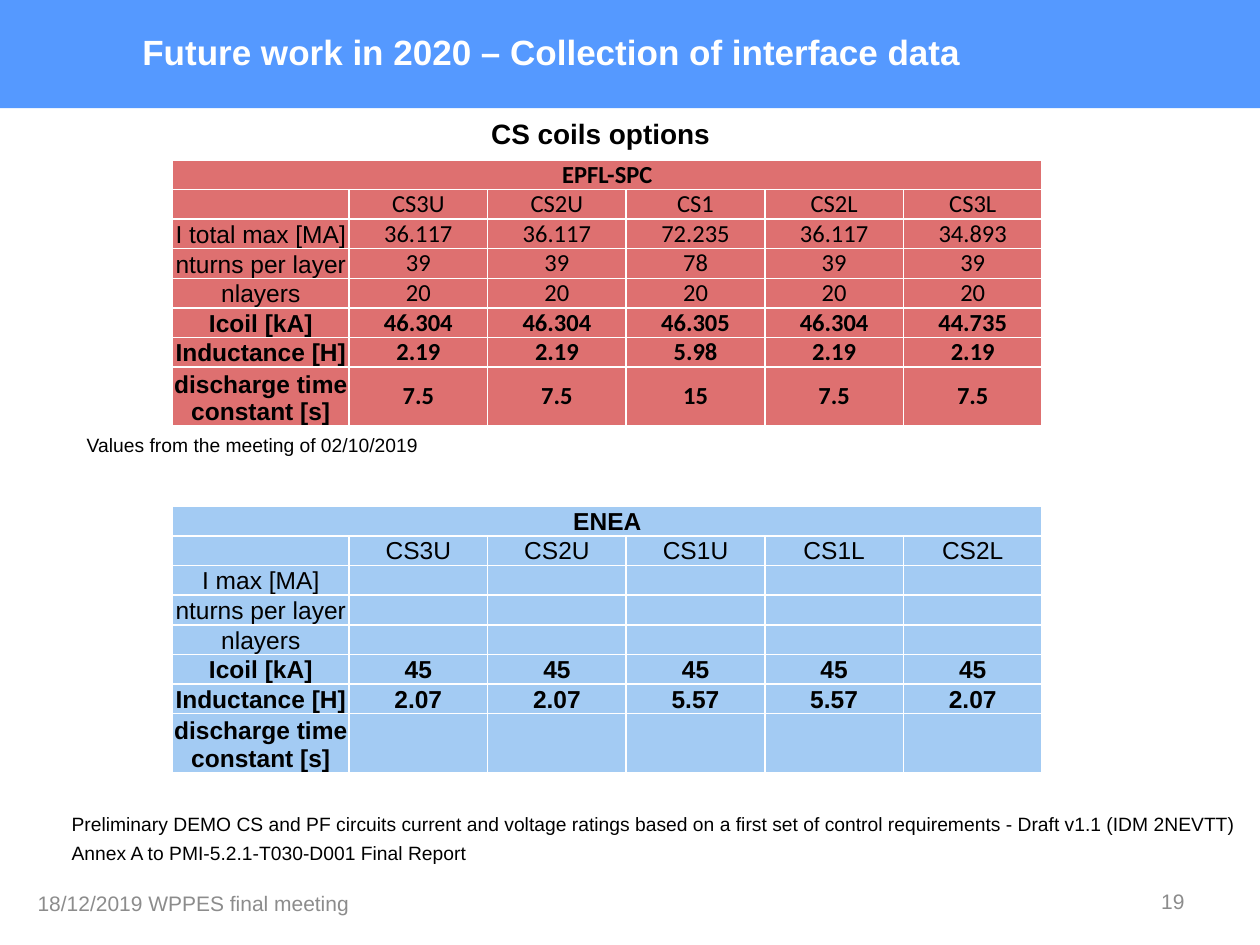
import lxml.etree
import pptx
import pptx.dml.color
import pptx.enum.shapes
import pptx.enum.text
import pptx.oxml.ns
import pptx.util

Inches = pptx.util.Inches
Align = pptx.enum.text.PP_ALIGN
Anchor = pptx.enum.text.MSO_ANCHOR
qn = pptx.oxml.ns.qn

COLORS = {
    "band": "5599FF",
    "red": "DE7070",
    "blue": "A3CBF3",
    "white": "FFFFFF",
    "black": "000000",
    "gray": "8C8C8C",
}
SIDES = ("lnL", "lnR", "lnT", "lnB")
TURNS = "nturns per layer"
DECAY = "discharge time constant [s]"
BLANK = [""] * 5

SPC = [
    ["EPFL-SPC"] + BLANK,
    ["", "CS3U", "CS2U", "CS1", "CS2L", "CS3L"],
    ["I total max [MA]", "36.117", "36.117", "72.235", "36.117", "34.893"],
    [TURNS, "39", "39", "78", "39", "39"],
    ["nlayers"] + ["20"] * 5,
    ["Icoil [kA]", "46.304", "46.304", "46.305", "46.304", "44.735"],
    ["Inductance [H]", "2.19", "2.19", "5.98", "2.19", "2.19"],
    [DECAY, "7.5", "7.5", "15", "7.5", "7.5"],
]
ENEA = [
    ["ENEA"] + BLANK,
    ["", "CS3U", "CS2U", "CS1U", "CS1L", "CS2L"],
    ["I max [MA]"] + BLANK,
    [TURNS] + BLANK,
    ["nlayers"] + BLANK,
    ["Icoil [kA]"] + ["45"] * 5,
    ["Inductance [H]", "2.07", "2.07", "5.57", "5.57", "2.07"],
    [DECAY] + BLANK,
]


def rgb(name):
    return pptx.dml.color.RGBColor.from_string(COLORS[name])


class Deck:
    def __init__(self):
        self.prs = pptx.Presentation()
        self.prs.slide_width = Inches(10)
        self.prs.slide_height = Inches(7.5)
        self.slide = self.prs.slides.add_slide(self.prs.slide_layouts[5])
        self.shapes = self.slide.shapes

    def style(self, frame, size, color="black", bold=False, align=Align.LEFT,
              face="Arial"):
        for para in frame.paragraphs:
            para.alignment = align
            for run in para.runs:
                run.font.name = face
                run.font.size = pptx.util.Pt(size)
                run.font.bold = bold
                run.font.color.rgb = rgb(color)

    def band(self, height):
        """Draw the header band behind everything else."""
        rect = self.shapes.add_shape(
            pptx.enum.shapes.MSO_SHAPE.RECTANGLE, 0, 0,
            self.prs.slide_width, Inches(height))
        rect.shadow.inherit = False
        rect.fill.solid()
        rect.fill.fore_color.rgb = rgb("band")
        rect.line.fill.background()
        self.shapes.title._element.addprevious(rect._element)

    def title(self, text, left, top, width, height):
        box = self.shapes.title
        box.left, box.top = Inches(left), Inches(top)
        box.width, box.height = Inches(width), Inches(height)
        box.text_frame.text = text
        box.text_frame.vertical_anchor = Anchor.MIDDLE
        self.style(box.text_frame, 20, "white", True)

    def text(self, text, left, top, width, height, size=11,
             anchor=Anchor.TOP, **look):
        box = self.shapes.add_textbox(
            Inches(left), Inches(top), Inches(width), Inches(height))
        frame = box.text_frame
        frame.word_wrap = True
        frame.vertical_anchor = anchor
        frame.text = text
        self.style(frame, size, **look)

    def cell(self, cell, text, fill, **look):
        cell.margin_left = cell.margin_right = 0
        cell.margin_top = cell.margin_bottom = 0
        props = cell._tc.get_or_add_tcPr()
        for side in SIDES:
            line = lxml.etree.SubElement(props, qn("a:" + side), w="12700")
            paint = lxml.etree.SubElement(line, qn("a:solidFill"))
            lxml.etree.SubElement(paint, qn("a:srgbClr"), val=COLORS["white"])
        cell.fill.solid()
        cell.fill.fore_color.rgb = rgb(fill)
        cell.text_frame.text = text
        self.style(cell.text_frame, 14, align=Align.CENTER, **look)
        if not text:  # keeps an empty cell as low as the filled ones
            para = cell.text_frame.paragraphs[0]._p
            lxml.etree.SubElement(para, qn("a:endParaRPr"), sz="1400")

    def table(self, rows, top, last, fill, face, mid):
        """Add a coil table; row numbers in mid have centred values."""
        height = 0.235 * (len(rows) - 1) + last
        grid = self.shapes.add_table(
            len(rows), len(rows[0]), Inches(1.37), Inches(top),
            Inches(6.9), Inches(height)).table
        grid.horz_banding = grid.first_row = False
        for col in grid.columns:
            col.width = Inches(1.1)
        grid.columns[0].width = Inches(1.4)
        for i, row in enumerate(rows):
            grid.rows[i].height = Inches(0.235)
            for j, text in enumerate(row):
                cell = grid.cell(i, j)
                label = j == 0 and i > 0
                self.cell(cell, text, fill, bold=i == 0 or i > 4,
                          face="Arial" if label else face)
                centred = i in mid and not label
                cell.vertical_anchor = (
                    Anchor.MIDDLE if centred else Anchor.BOTTOM)
        grid.rows[len(rows) - 1].height = Inches(last)
        grid.cell(0, 0).merge(grid.cell(0, len(rows[0]) - 1))


def main():
    deck = Deck()
    deck.band(0.86)
    deck.title("Future work in 2020 – Collection of interface data",
               1.03, 0.05, 7.91, 0.71)
    deck.text("CS coils options", 3.8, 0.88, 2.02, 0.37, 16, bold=True)
    deck.table(SPC, 1.27, 0.43, "red", "Calibri", mid=(7,))
    deck.text("Values from the meeting of 02/10/2019", 0.59, 3.39, 3, 0.29)
    deck.table(ENEA, 4.02, 0.46, "blue", "Arial", mid=(1,))
    deck.text("Preliminary DEMO CS and PF circuits current and voltage ratings "
              "based on a first set of control requirements - Draft v1.1 "
              "(IDM 2NEVTT)", 0.47, 6.4, 9.53, 0.29)
    deck.text("Annex A to PMI-5.2.1-T030-D001 Final Report",
              0.47, 6.63, 3.55, 0.29)
    deck.text("18/12/2019 WPPES final meeting", 0.2, 6.97, 3.12, 0.4, 12,
              Anchor.MIDDLE, color="gray")
    deck.text("19", 7.17, 6.95, 2.33, 0.4, 12, Anchor.MIDDLE, color="gray",
              align=Align.RIGHT)
    deck.prs.save("out.pptx")


if __name__ == "__main__":
    main()
